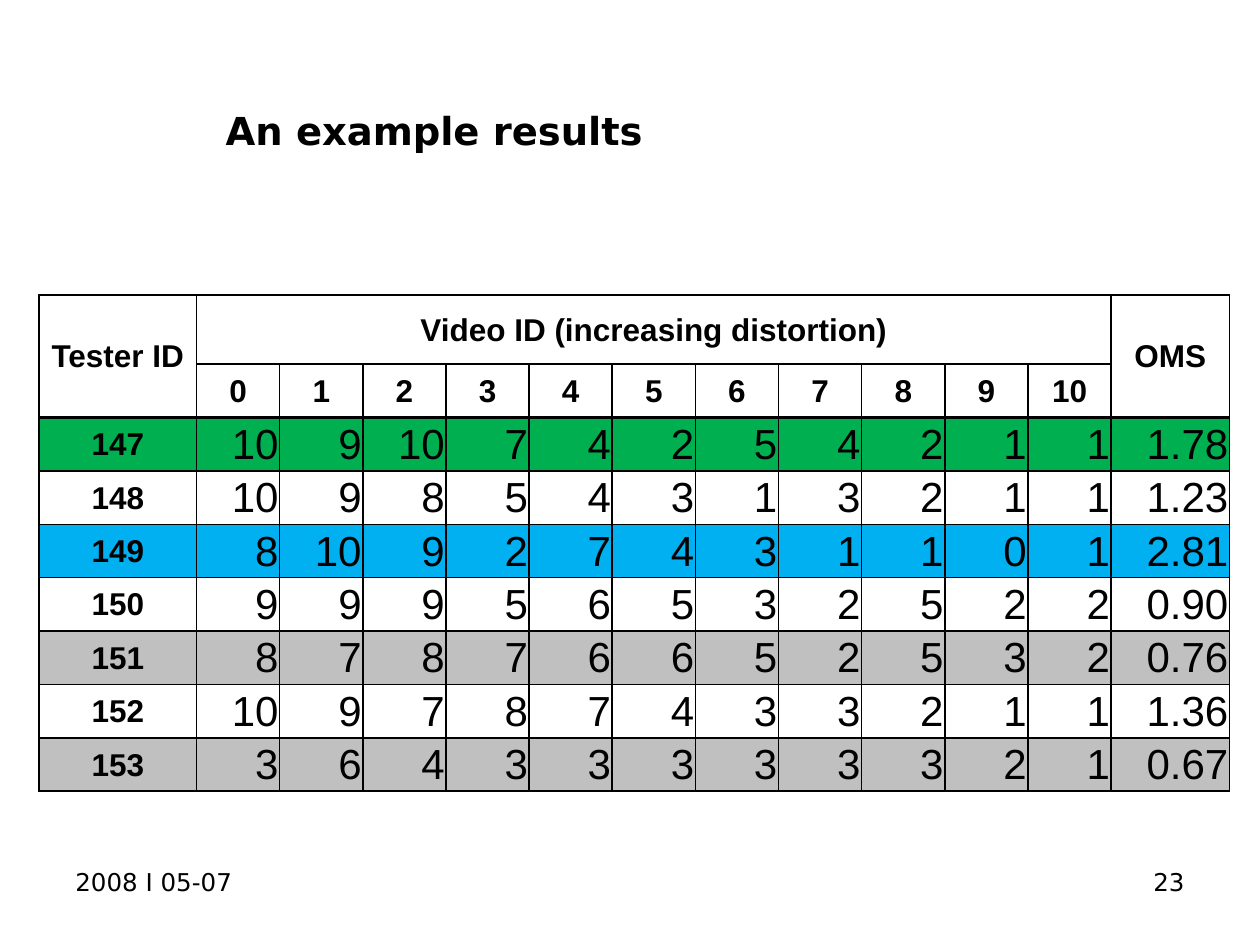
from dataclasses import dataclass

from lxml import etree
from pptx import Presentation
from pptx.dml.color import RGBColor
from pptx.enum.text import MSO_ANCHOR, PP_ALIGN
from pptx.oxml.ns import qn
from pptx.util import Inches, Pt

LEFT, CENTER, RIGHT = PP_ALIGN.LEFT, PP_ALIGN.CENTER, PP_ALIGN.RIGHT
MIDDLE = MSO_ANCHOR.MIDDLE

BLACK, GREEN, BLUE, GRAY = "000000", "00B050", "00B0F0", "C0C0C0"
SLIDE_FONT, TABLE_FONT = "DejaVu Sans", "Arial"

TABLE_LEFT, TABLE_TOP, TABLE_WIDTH, TABLE_HEIGHT = 0.31, 2.34, 9.45, 3.94
TESTER_WIDTH, SCORE_WIDTH = 1.25, 0.94
HEADER_HEIGHT = 0.55
VIDEO_COUNT = 11
HEADER_ROWS = 2
THIN, THICK = 1, 1.5


@dataclass
class Tester:
    number: int
    ratings: tuple[int, ...]
    score: str
    fill: str | None = None


@dataclass
class FooterText:
    text: str
    left: float
    alignment: PP_ALIGN


TESTERS = [
    Tester(147, (10, 9, 10, 7, 4, 2, 5, 4, 2, 1, 1), "1.78", GREEN),
    Tester(148, (10, 9, 8, 5, 4, 3, 1, 3, 2, 1, 1), "1.23"),
    Tester(149, (8, 10, 9, 2, 7, 4, 3, 1, 1, 0, 1), "2.81", BLUE),
    Tester(150, (9, 9, 9, 5, 6, 5, 3, 2, 5, 2, 2), "0.90"),
    Tester(151, (8, 7, 8, 7, 6, 6, 5, 2, 5, 3, 2), "0.76", GRAY),
    Tester(152, (10, 9, 7, 8, 7, 4, 3, 3, 2, 1, 1), "1.36"),
    Tester(153, (3, 6, 4, 3, 3, 3, 3, 3, 3, 2, 1), "0.67", GRAY),
]
FOOTERS = [
    FooterText("2008 I 05-07", 0.5, LEFT),
    FooterText("23", 7.17, RIGHT),
]


def color(value: str) -> RGBColor:
    return RGBColor.from_string(value)


def set_text(text_frame, text: str, font_name: str, size: float,
             alignment: PP_ALIGN, bold: bool = False) -> None:
    text_frame.text = text
    paragraph = text_frame.paragraphs[0]
    paragraph.alignment = alignment
    for run in paragraph.runs:
        run.font.name = font_name
        run.font.size = Pt(size)
        run.font.bold = bold
        run.font.color.rgb = color(BLACK)


def set_borders(cell, top: float, bottom: float) -> None:
    """Draw black borders, with the widths of the top and bottom in points."""
    properties = cell._tc.get_or_add_tcPr()
    widths = {"a:lnL": THIN, "a:lnR": THIN, "a:lnT": top, "a:lnB": bottom}
    for tag, width in widths.items():
        line = etree.SubElement(properties, qn(tag), w=str(Pt(width)))
        fill = etree.SubElement(line, qn("a:solidFill"))
        etree.SubElement(fill, qn("a:srgbClr"), val=BLACK)


def format_cell(cell, row: int, fill: str | None) -> None:
    cell.vertical_anchor = MIDDLE
    cell.margin_left = cell.margin_top = cell.margin_right = Inches(0.01)
    cell.margin_bottom = 0
    set_borders(cell, THICK if 0 < row <= HEADER_ROWS else THIN,
                THICK if row < HEADER_ROWS else THIN)
    if fill:
        cell.fill.solid()
        cell.fill.fore_color.rgb = color(fill)
    else:
        cell.fill.background()


def add_results_table(slide) -> None:
    row_count, column_count = HEADER_ROWS + len(TESTERS), VIDEO_COUNT + 2
    last = column_count - 1
    table = slide.shapes.add_table(
        row_count, column_count, Inches(TABLE_LEFT), Inches(TABLE_TOP),
        Inches(TABLE_WIDTH), Inches(TABLE_HEIGHT)).table
    table.first_row = table.horz_banding = False

    video_width = (TABLE_WIDTH - TESTER_WIDTH - SCORE_WIDTH) / VIDEO_COUNT
    widths = [TESTER_WIDTH] + [video_width] * VIDEO_COUNT + [SCORE_WIDTH]
    for column, width in zip(table.columns, widths):
        column.width = Inches(width)
    row_height = (TABLE_HEIGHT - HEADER_HEIGHT) / (row_count - 1)
    heights = [HEADER_HEIGHT] + [row_height] * (row_count - 1)
    for row, height in zip(table.rows, heights):
        row.height = Inches(height)

    fills = [None] * HEADER_ROWS + [tester.fill for tester in TESTERS]
    for row, fill in enumerate(fills):
        for column in range(column_count):
            format_cell(table.cell(row, column), row, fill)

    table.cell(0, 0).merge(table.cell(1, 0))
    table.cell(0, 1).merge(table.cell(0, VIDEO_COUNT))
    table.cell(0, last).merge(table.cell(1, last))

    labels = {(0, 0): "Tester ID", (0, last): "OMS",
              (0, 1): "Video ID (increasing distortion)"}
    labels.update({(1, video + 1): str(video) for video in range(VIDEO_COUNT)})
    for row, tester in enumerate(TESTERS, HEADER_ROWS):
        labels[row, 0] = str(tester.number)
        for column, value in enumerate((*tester.ratings, tester.score), 1):
            set_text(table.cell(row, column).text_frame, str(value),
                     TABLE_FONT, 24, RIGHT)
    for (row, column), label in labels.items():
        set_text(table.cell(row, column).text_frame, label,
                 TABLE_FONT, 18, CENTER, bold=True)


def add_footer(slide, footer: FooterText) -> None:
    box = slide.shapes.add_textbox(Inches(footer.left), Inches(6.83),
                                   Inches(2.33), Inches(0.52))
    box.text_frame.word_wrap = True
    set_text(box.text_frame, footer.text, SLIDE_FONT, 14, footer.alignment)


def main() -> None:
    presentation = Presentation()
    presentation.slide_width = Inches(10)
    presentation.slide_height = Inches(7.5)
    slide = presentation.slides.add_slide(presentation.slide_layouts[5])

    title = slide.shapes.title
    title.left, title.top = Inches(1.69), Inches(0.52)
    title.width, title.height = Inches(7.81), Inches(1.03)
    title.text_frame.vertical_anchor = MIDDLE
    set_text(title.text_frame, "An example results", SLIDE_FONT, 22, LEFT, bold=True)

    for footer in FOOTERS:
        add_footer(slide, footer)
    add_results_table(slide)
    presentation.save("out.pptx")


if __name__ == "__main__":
    main()
